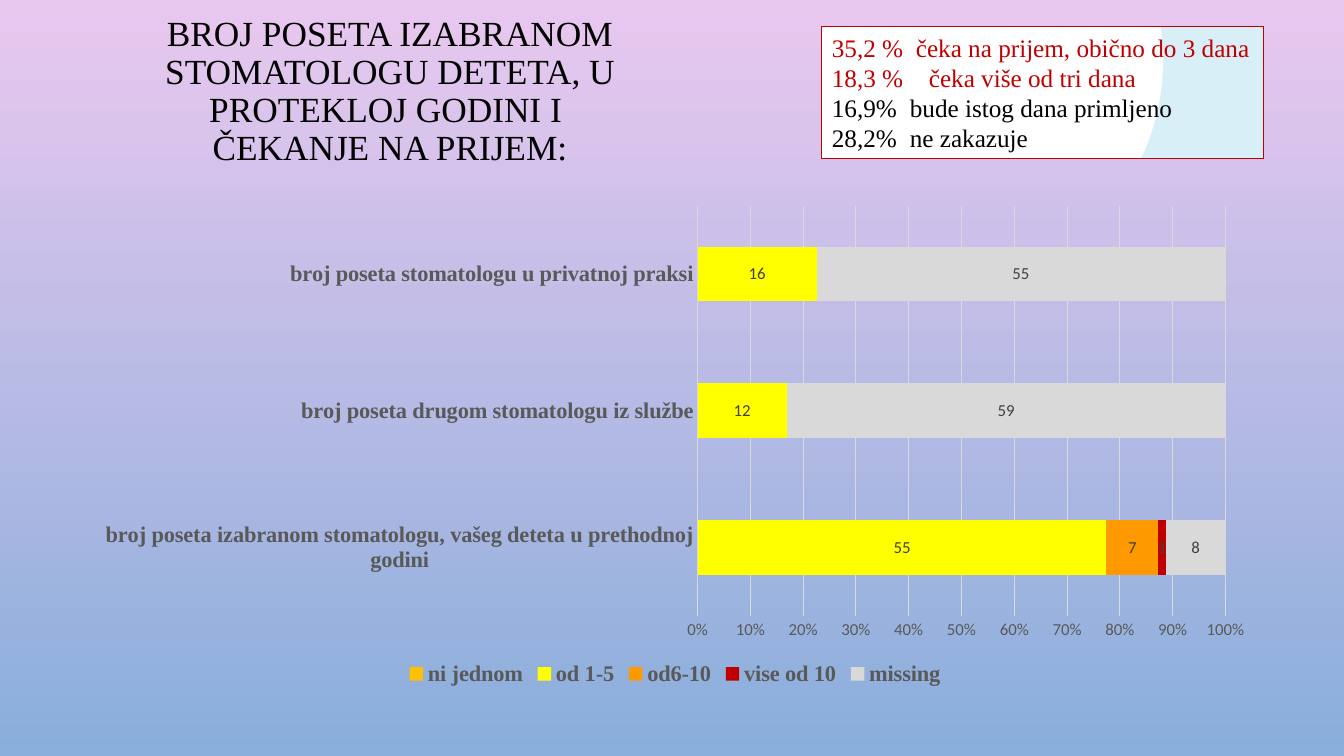
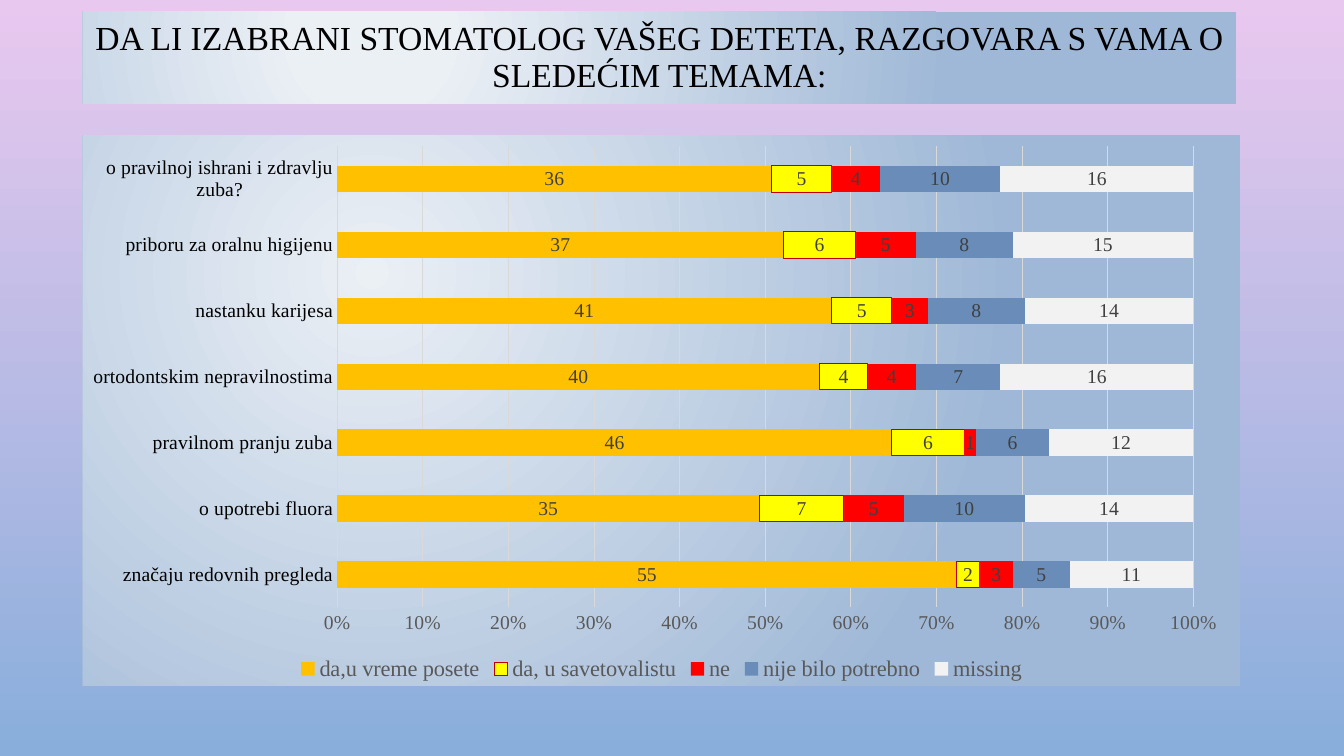
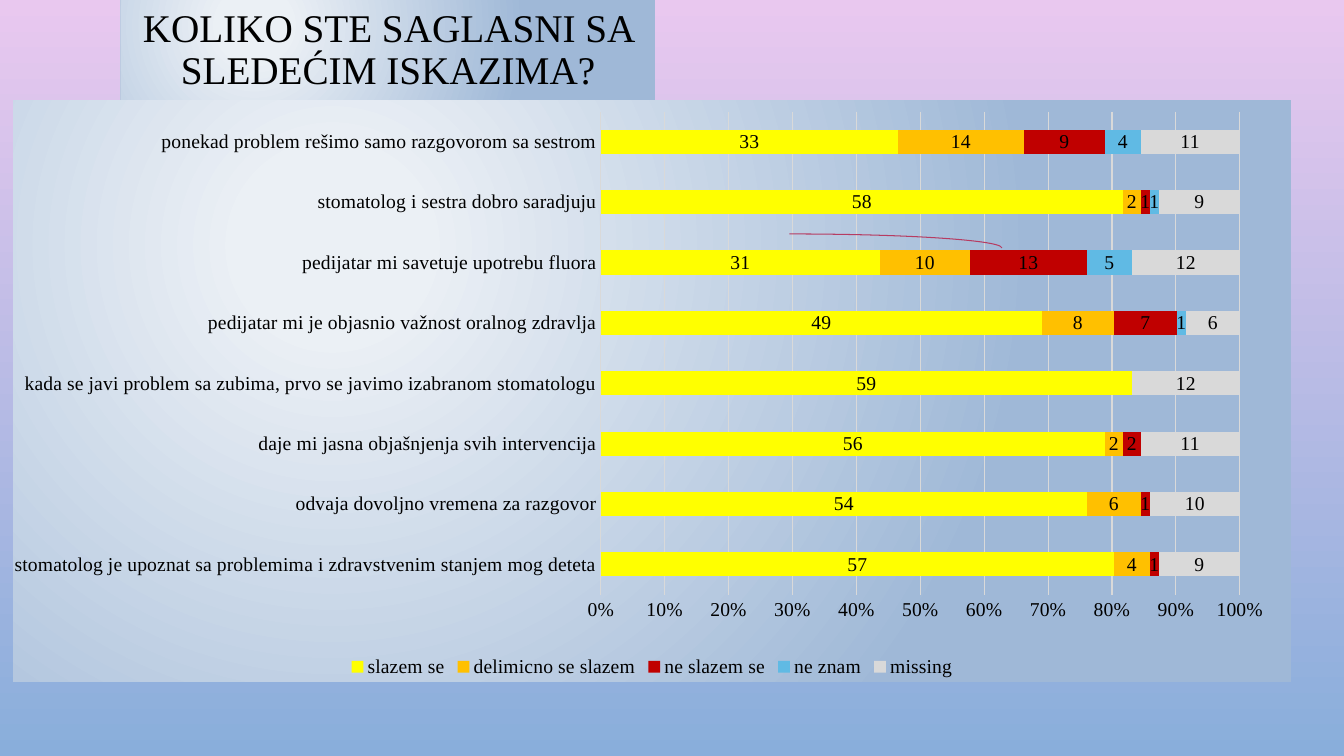
import pptx
import pptx.chart.data
import pptx.dml.color
import pptx.enum.chart
import pptx.enum.shapes
import pptx.enum.text
import pptx.oxml
import pptx.oxml.ns
import pptx.util

PX = 12192000 / 1344
SERIF = "Times New Roman"
SANS = "Calibri"
COLORS = {
    "sky_top": "E9C8EF", "sky_bottom": "89AEDB",
    "panel_light": "EBF0F5", "panel_dark": "9FB8D7",
    "white": "FFFFFF", "ice": "D9EFF7", "black": "000000",
    "text_gray": "595959", "label_gray": "404040", "light_gray": "D9D9D9",
    "pale": "F2F2F2", "amber": "FFC000", "yellow": "FFFF00",
    "orange": "FF9900", "dark_red": "C00000", "red": "FF0000",
    "steel": "698CB8", "azure": "60BAE4", "rose": "B63C62",
}
NS = pptx.oxml.ns.nsdecls("a", "c")


def px(length):
    """Turn px into EMU."""
    return pptx.util.Emu(round(length * PX))


def box(*lengths):
    """Turn left, top, width and height in px into EMU."""
    return [px(length) for length in lengths]


def rgb(name):
    """Look up a named colour."""
    return pptx.dml.color.RGBColor.from_string(COLORS[name])


def apply(target, **values):
    """Set attributes of a target from format values."""
    for name, value in values.items():
        setattr(target, name, value)


def style_font(font, size, color, name=SERIF, bold=False):
    """Give a font its size, colour, face and weight."""
    apply(font, size=pptx.util.Pt(size), name=name, bold=bold)
    font.color.rgb = rgb(color)


def style_line(line, color, width=0.75):
    """Give a line its colour and width."""
    line.color.rgb = rgb(color)
    line.width = pptx.util.Pt(width)


def radial_xml(inner, outer, start):
    """Describe a round gradient centred in the upper left quarter."""
    stops = "".join(
        f'<a:gs pos="{position * 1000}"><a:srgbClr val="{COLORS[color]}"/></a:gs>'
        for position, color in ((start, inner), (100, outer)))
    return (f'<a:gradFill {NS} rotWithShape="1"><a:gsLst>{stops}</a:gsLst><a:path path="circle">'
            '<a:fillToRect l="50000" t="50000" r="100000" b="100000"/></a:path></a:gradFill>')


def fill_radial(shape, inner="panel_light", outer="panel_dark", start=13):
    """Fill a shape with a round gradient."""
    shape.fill.gradient()
    properties = shape.element.spPr
    plain = properties.find(pptx.oxml.ns.qn("a:gradFill"))
    properties.replace(plain, pptx.oxml.parse_xml(radial_xml(inner, outer, start)))


def set_background(master):
    """Give all slides the vertical colour blend."""
    fill = master.background.fill
    fill.gradient()
    fill.gradient_angle = 270
    for stop, color in zip(fill.gradient_stops, ("sky_top", "sky_bottom")):
        stop.color.rgb = rgb(color)


def add_titled_slide(deck, text, place, size, panel=True):
    """Add a slide with its formatted title."""
    slide = deck.slides.add_slide(deck.slide_layouts[5])
    title = slide.shapes.title
    apply(title, **dict(zip(("left", "top", "width", "height"), box(*place))))
    if panel:
        fill_radial(title)
    title.text_frame.text = text
    apply(title.text_frame, word_wrap=True,
          auto_size=pptx.enum.text.MSO_AUTO_SIZE.NONE,
          vertical_anchor=pptx.enum.text.MSO_ANCHOR.MIDDLE)
    heading = title.text_frame.paragraphs[0]
    apply(heading, alignment=pptx.enum.text.PP_ALIGN.CENTER, line_spacing=0.9)
    for run in heading.runs:
        style_font(run.font, size, "black")
    return slide


def add_waiting_box(slide, place, rows):
    """Add the framed list of waiting times, each row with its own tab stop."""
    waiting = slide.shapes.add_textbox(*box(*place))
    fill_radial(waiting, "white", "ice", 100)
    style_line(waiting.line, "dark_red")
    frame = waiting.text_frame
    apply(frame, word_wrap=True, auto_size=pptx.enum.text.MSO_AUTO_SIZE.NONE)
    for index, (share, answer, stop, color) in enumerate(rows):
        row = frame.add_paragraph() if index else frame.paragraphs[0]
        row._p.get_or_add_pPr().append(pptx.oxml.parse_xml(
            f'<a:tabLst {NS}><a:tab pos="{px(stop)}" algn="l"/></a:tabLst>'))
        run = row.add_run()
        run.text = f"{share}\t{answer}"
        style_font(run.font, 18, color)


def style_axes(chart, category_font, value_font):
    """Format both axes and the grid."""
    none = pptx.enum.chart.XL_TICK_MARK.NONE
    for axis, font in ((chart.category_axis, category_font), (chart.value_axis, value_font)):
        apply(axis, major_tick_mark=none, minor_tick_mark=none)
        style_font(axis.tick_labels.font, **font)
    style_line(chart.category_axis.format.line, "light_gray")
    values = chart.value_axis
    values.has_major_gridlines = True
    style_line(values.major_gridlines.format.line, "light_gray")
    values.format.line.fill.background()
    apply(values.tick_labels, number_format="0%", number_format_is_linked=False)


def style_areas(chart, panel_start, plot_place):
    """Fill the chart area, clear the plot area and place it."""
    fill = "<a:noFill/>" if panel_start is None else radial_xml(
        "panel_light", "panel_dark", panel_start)
    area = chart.element.find(pptx.oxml.ns.qn("c:chart"))
    plot = area.find(pptx.oxml.ns.qn("c:plotArea"))
    for add, paint in ((area.addnext, fill), (plot.append, "<a:noFill/>")):
        add(pptx.oxml.parse_xml(
            f"<c:spPr {NS}>{paint}<a:ln><a:noFill/></a:ln></c:spPr>"))
    if plot_place:
        for layout in plot.findall(pptx.oxml.ns.qn("c:layout")):
            plot.remove(layout)
        modes = "".join(f'<c:{side}Mode val="edge"/>' for side in "xy")
        sides = "".join(f'<c:{side} val="{value}"/>' for side, value in zip("xywh", plot_place))
        plot.insert(0, pptx.oxml.parse_xml(
            f'<c:layout {NS}><c:manualLayout><c:layoutTarget val="inner"/>'
            f"{modes}{sides}</c:manualLayout></c:layout>"))


def add_answers_chart(slide, place, categories, answers, fonts, panel_start=None,
                      plot_place=None, outlined=None):
    """Add a 100 % stacked bar chart of the survey answers."""
    data = pptx.chart.data.CategoryChartData()
    data.categories = categories
    for name, _, counts in answers:
        data.add_series(name, counts)
    chart = slide.shapes.add_chart(
        pptx.enum.chart.XL_CHART_TYPE.BAR_STACKED_100, *box(*place), data).chart
    apply(chart, has_title=False, has_legend=True)
    style_font(chart.font, **fonts["chart"])
    apply(chart.legend, include_in_layout=False,
          position=pptx.enum.chart.XL_LEGEND_POSITION.BOTTOM)
    style_font(chart.legend.font, **fonts["legend"])
    apply(chart.plots[0], gap_width=150, overlap=100, vary_by_categories=False)
    for series, (name, color, _) in zip(chart.plots[0].series, answers):
        series.invert_if_negative = False
        series.format.fill.solid()
        series.format.fill.fore_color.rgb = rgb(color)
        if name == outlined:
            style_line(series.format.line, "dark_red")
        series.data_labels.show_value = True
        style_font(series.data_labels.font, **fonts["labels"])
    style_axes(chart, fonts["categories"], fonts["values"])
    style_areas(chart, panel_start, plot_place)


def add_visits_slide(deck):
    """Build the slide on visits and waiting."""
    slide = add_titled_slide(
        deck, "BROJ POSETA IZABRANOM STOMATOLOGU DETETA, U PROTEKLOJ GODINI I \v"
        "ČEKANJE NA PRIJEM:", (121, 31, 538, 122), 25.2, panel=False)
    heavy = dict(size=16, color="text_gray", bold=True)
    add_answers_chart(
        slide, (82, 196, 1186, 495),
        ("broj poseta izabranom stomatologu, vašeg deteta u prethodnoj godini",
         "broj poseta drugom stomatologu iz službe",
         "broj poseta stomatologu u privatnoj praksi"),
        (("ni jednom", "amber", (None, None, None)),
         ("od 1-5", "yellow", (55, 12, 16)),
         ("od6-10", "orange", (7, None, None)),
         ("vise od 10", "dark_red", (1, None, None)),
         ("missing", "light_gray", (8, 59, 55))),
        dict(chart=dict(size=10, color="black", name=SANS), legend=heavy, categories=heavy,
             values=dict(size=12, color="text_gray", name=SANS),
             labels=dict(size=12, color="label_gray", name=SANS)))
    add_waiting_box(slide, (822, 27, 442, 132), (
        ("35,2 %", "čeka na prijem, obično do 3 dana", 84, "dark_red"),
        ("18,3 %", "čeka više od tri dana", 97, "dark_red"),
        ("16,9%", "bude istog dana primljeno", 78, "black"),
        ("28,2%", "ne zakazuje", 78, "black")))


def add_topics_slide(deck):
    """Build the slide on topics discussed with the dentist."""
    slide = add_titled_slide(
        deck, "DA LI IZABRANI STOMATOLOG VAŠEG DETETA, RAZGOVARA S VAMA O SLEDEĆIM TEMAMA:",
        (83, 12, 1153, 92), 24)
    black = dict(size=14, color="black")
    add_answers_chart(
        slide, (83, 135, 1157, 551),
        ("značaju redovnih pregleda", "o upotrebi fluora", "pravilnom pranju zuba",
         "ortodontskim nepravilnostima", "nastanku karijesa", "priboru za oralnu higijenu",
         "o pravilnoj ishrani i zdravlju zuba?"),
        (("da,u vreme posete", "amber", (55, 35, 46, 40, 41, 37, 36)),
         ("da, u savetovalistu", "yellow", (2, 7, 6, 4, 5, 6, 5)),
         ("ne", "red", (3, 5, 1, 4, 3, 5, 4)),
         ("nije bilo potrebno", "steel", (5, 10, 6, 7, 8, 8, 10)),
         ("missing", "pale", (11, 14, 12, 16, 14, 15, 16))),
        dict(chart=black, categories=black, legend=dict(size=16, color="text_gray"),
             values=dict(size=14, color="text_gray"), labels=dict(size=14, color="label_gray")),
        panel_start=0, outlined="da, u savetovalistu")


def add_statements_slide(deck):
    """Build the slide on agreement with statements."""
    slide = add_titled_slide(
        deck, "KOLIKO STE SAGLASNI SA SLEDEĆIM ISKAZIMA?", (121, 0, 534, 101), 28)
    parts = ("chart", "legend", "categories", "values", "labels")
    add_answers_chart(
        slide, (13, 100, 1278, 582),
        ("stomatolog je upoznat sa problemima i zdravstvenim stanjem mog deteta",
         "odvaja dovoljno vremena za razgovor",
         "daje mi jasna objašnjenja svih intervencija",
         "kada se javi problem sa zubima, prvo se javimo izabranom stomatologu",
         "pedijatar mi je objasnio važnost oralnog zdravlja",
         "pedijatar mi savetuje upotrebu fluora",
         "stomatolog i sestra dobro saradjuju",
         "ponekad problem rešimo samo razgovorom sa sestrom"),
        (("slazem se", "yellow", (57, 54, 56, 59, 49, 31, 58, 33)),
         ("delimicno se slazem", "amber", (4, 6, 2, None, 8, 10, 2, 14)),
         ("ne slazem se", "dark_red", (1, 1, 2, None, 7, 13, 1, 9)),
         ("ne znam", "azure", (None, None, None, None, 1, 5, 1, 4)),
         ("missing", "light_gray", (9, 10, 11, 12, 6, 12, 9, 11))),
        dict.fromkeys(parts, dict(size=14, color="black")),
        panel_start=13, plot_place=(0.46, 0.02, 0.5, 0.83))
    fluoride_mark = slide.shapes.add_shape(
        pptx.enum.shapes.MSO_SHAPE.ARC, *box(577, 234, 425, 28))
    fluoride_mark.shadow.inherit = False
    fluoride_mark.fill.background()
    style_line(fluoride_mark.line, "rose")


def main():
    """Build and save the survey slides."""
    deck = pptx.Presentation()
    apply(deck, slide_width=px(1344), slide_height=px(756))
    set_background(deck.slide_master)
    add_visits_slide(deck)
    add_topics_slide(deck)
    add_statements_slide(deck)
    deck.save("out.pptx")


if __name__ == "__main__":
    main()
